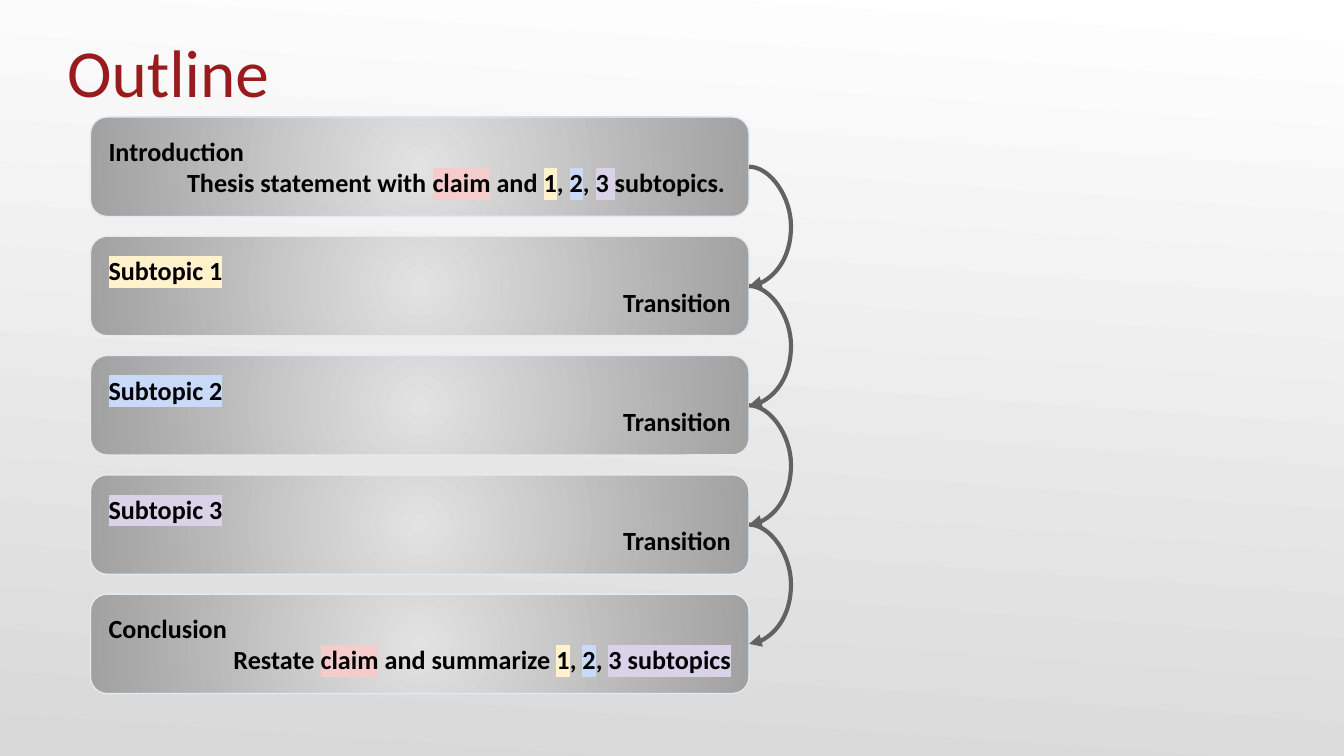
"""Builds the essay outline slide with five linked sections."""
import pptx
import pptx.util
import pptx.dml.color
import pptx.enum.shapes
import pptx.enum.text
import pptx.oxml.ns
from lxml import etree

Pt = pptx.util.Pt
ALIGN = pptx.enum.text.PP_ALIGN
ANCHOR = pptx.enum.text.MSO_ANCHOR

COLORS = {
    "page_top": "FFFFFF", "page_bottom": "D8D8D8",
    "card_center": "E2E2E2", "card_edge": "A1A1A1", "outline": "E0EBF5",
    "arrow": "626262", "title": "991B1E", "text": "000000",
    "claim": "F4CCCC", "one": "FFF2CC", "two": "C9DAF8", "three": "D9D2E9",
}
SECTIONS = [
    ([("Introduction", None)],
     [("Thesis statement with ", None), ("claim", "claim"), (" and ", None), ("1", "one"),
      (", ", None), ("2", "two"), (", ", None), ("3 ", "three"), ("subtopics. ", None)]),
    *[([(f"Subtopic {number}", mark)], [("Transition", None)])
      for number, mark in enumerate(("one", "two", "three"), 1)],
    ([("Conclusion", None)],
     [("Restate ", None), ("claim", "claim"), (" and summarize ", None), ("1", "one"),
      (", ", None), ("2", "two"), (", ", None), ("3 subtopics", "three")]),
]


def rgb(name):
    return pptx.dml.color.RGBColor.from_string(COLORS[name])


def add_child(parent, tag, **attributes):
    return etree.SubElement(parent, pptx.oxml.ns.qn(tag), **attributes)


def add_span(para, text, size=14, color="text", bold=False, mark=None):
    span = para.add_run()
    span.text = text
    span.font.size = Pt(size)
    span.font.bold = bold
    span.font.color.rgb = rgb(color)
    if mark:
        highlight = add_child(span.font._element, "a:highlight")
        add_child(highlight, "a:srgbClr", val=COLORS[mark])
    span.font.name = "Calibri"


def set_gradient(fill, start, end):
    fill.gradient()
    for stop, name, position in zip(fill.gradient_stops, (start, end), (0, 1)):
        stop.color.rgb = rgb(name)
        stop.position = position


class OutlineSlide:
    """Holds the style and the current slide."""

    def __init__(self, page):
        self.page = page
        self.inset = 7.2

    def background(self):
        fill = self.page.background.fill
        set_gradient(fill, "page_top", "page_bottom")
        fill.gradient_angle = 266

    def frame(self, box, anchor, insets):
        frame = box.text_frame
        frame.word_wrap = True
        frame.vertical_anchor = anchor
        frame.margin_left, frame.margin_top, frame.margin_right, frame.margin_bottom = map(Pt, insets)
        return frame

    def title(self, text, left, top, width, height):
        box = self.page.shapes.add_textbox(Pt(left), Pt(top), Pt(width), Pt(height))
        frame = self.frame(box, ANCHOR.BOTTOM, (0, 3.6, 0, 0))
        add_span(frame.paragraphs[0], text, size=36, color="title")

    def card(self, heading, detail, left, top, width, height):
        box = self.page.shapes.add_shape(
            pptx.enum.shapes.MSO_SHAPE.ROUNDED_RECTANGLE, Pt(left), Pt(top), Pt(width), Pt(height))
        box.shadow.inherit = False
        box.line.color.rgb = rgb("outline")
        box.line.width = Pt(0.75)
        set_gradient(box.fill, "card_center", "card_edge")
        gradient = box._element.spPr.find(pptx.oxml.ns.qn("a:gradFill"))
        gradient.remove(gradient.find(pptx.oxml.ns.qn("a:lin")))
        radial = add_child(gradient, "a:path", path="circle")
        add_child(radial, "a:fillToRect", l="50000", t="50000", r="50000", b="50000")
        frame = self.frame(box, ANCHOR.MIDDLE, [self.inset] * 4)
        rows = ((frame.paragraphs[0], heading, ALIGN.LEFT),
                (frame.add_paragraph(), detail, ALIGN.RIGHT))
        for para, spans, align in rows:
            para.alignment = align
            for text, mark in spans:
                add_span(para, text, bold=True, mark=mark)
        return box

    def arrow(self, source, target):
        side = source.left + source.width
        start, end = (card.top + card.height // 2 for card in (source, target))
        arrow = self.page.shapes.add_connector(
            pptx.enum.shapes.MSO_CONNECTOR.CURVE, side, start, side, end)
        arrow.begin_connect(source, 3)
        arrow.end_connect(target, 3)
        arrow.width = Pt(0.05)
        arrow.line.color.rgb = rgb("arrow")
        arrow.line.width = Pt(2.25)
        properties = arrow._element.spPr
        add_child(arrow.line._get_or_add_ln(), "a:tailEnd", type="triangle")
        add_child(properties, "a:effectLst")
        guides = properties.find(".//" + pptx.oxml.ns.qn("a:avLst"))
        add_child(guides, "a:gd", name="adj1", fmla="val 39687500")


def main():
    deck = pptx.Presentation()
    deck.slide_width, deck.slide_height = Pt(720), Pt(405)
    outline = OutlineSlide(deck.slides.add_slide(deck.slide_layouts[6]))
    outline.background()
    cards = [outline.card(heading, detail, 48.5, 62.7 + 63.9 * index, 352.8, 53.3)
             for index, (heading, detail) in enumerate(SECTIONS)]
    for source, target in zip(cards, cards[1:]):
        outline.arrow(source, target)
    outline.title("Outline", 36, 10.4, 648, 49)
    deck.save("out.pptx")


if __name__ == "__main__":
    main()
